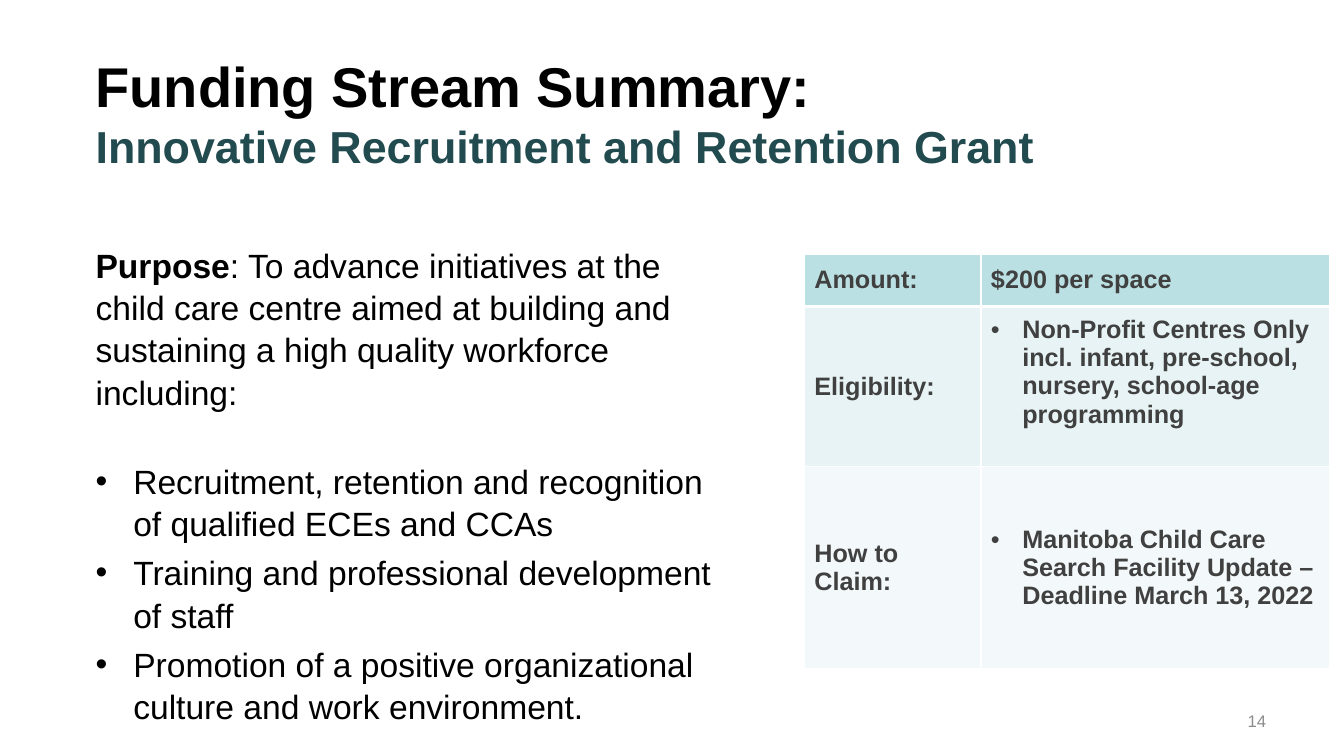
from dataclasses import dataclass

from lxml.etree import SubElement
from pptx import Presentation
from pptx.dml.color import RGBColor
from pptx.enum.text import MSO_ANCHOR, PP_ALIGN
from pptx.oxml import parse_xml
from pptx.oxml.ns import nsdecls, qn
from pptx.util import Cm, Pt


@dataclass(frozen=True)
class Theme:
    font: str = "Arial"
    black: str = "000000"
    teal: str = "224B50"
    dark: str = "404040"
    grey: str = "8C8C8C"
    white: str = "FFFFFF"
    rows: tuple = ("BBE0E3", "E7F3F4", "F3F9FA")
    title: int = 40
    subtitle: int = 32
    body: int = 24
    cell: int = 18
    number: int = 12


def add_span(para, text, *, font, size, color, bold=False):
    for index, line in enumerate(text.split("\n")):
        if index:
            para.add_line_break()
        if line:
            span = para.add_run()
            span.text = line
            span.font.name = font
            span.font.size = Pt(size)
            span.font.bold = bold
            span.font.color.rgb = RGBColor.from_string(color)


def add_bullet(para, indent):
    properties = para._p.get_or_add_pPr()
    properties.set("marL", str(indent))
    properties.set("indent", str(-indent))
    SubElement(properties, qn("a:buFont")).set("typeface", "Arial")
    SubElement(properties, qn("a:buChar")).set("char", "•")


def make_border(color, side, width):
    return parse_xml(
        f'<a:{side} {nsdecls("a")} w="{Pt(width)}"><a:solidFill>'
        f'<a:srgbClr val="{color}"/></a:solidFill></a:{side}>'
    )


class SlideBuilder:
    def __init__(self, deck, theme):
        self.theme = theme
        self.page = deck.slides.add_slide(deck.slide_layouts[6])

    def add_text(self, para, text, size, color, bold=False):
        add_span(para, text, font=self.theme.font, size=size, color=color, bold=bold)

    def text_box(self, left, top, width, height, anchor=MSO_ANCHOR.TOP):
        box = self.page.shapes.add_textbox(Cm(left), Cm(top), Cm(width), Cm(height))
        frame = box.text_frame
        frame.word_wrap = True
        frame.vertical_anchor = anchor
        return frame

    def title(self, heading, subheading):
        para = self.text_box(2.16, 1.24, 29.72, 3.18, MSO_ANCHOR.MIDDLE).paragraphs[0]
        self.add_text(para, heading + "\n", self.theme.title, self.theme.black, True)
        self.add_text(para, subheading, self.theme.subtitle, self.theme.teal, True)

    def body(self, lead, intro, points):
        size, color = self.theme.body, self.theme.black
        frame = self.text_box(2.16, 5.99, 16.71, 10.87)
        para = frame.paragraphs[0]
        para.line_spacing = 1.05
        self.add_text(para, lead, size, color, True)
        self.add_text(para, intro, size, color)
        for index, point in enumerate(points):
            para = frame.add_paragraph()
            para.line_spacing = 1.05
            para.space_before = Pt(4.8 if index else 33.6)
            add_bullet(para, Cm(0.95))
            self.add_text(para, point, size, color)

    def table(self, left, top, widths, heights, rows):
        table = self.page.shapes.add_table(
            len(rows), len(widths), Cm(left), Cm(top), Cm(sum(widths)), Cm(sum(heights))
        ).table
        table.horz_banding = False
        for column, width in zip(table.columns, widths):
            column.width = Cm(width)
        for row, height in zip(table.rows, heights):
            row.height = Cm(height)
        for r, texts in enumerate(rows):
            for c, text in enumerate(texts):
                self.fill_cell(table.cell(r, c), text, r, bulleted=r > 0 and c > 0)
        table.cell(1, 1).margin_bottom = Cm(0.86)

    def fill_cell(self, cell, text, row, bulleted):
        cell.vertical_anchor = MSO_ANCHOR.MIDDLE
        cell.fill.solid()
        cell.fill.fore_color.rgb = RGBColor.from_string(self.theme.rows[row])
        widths = {"lnL": 1, "lnR": 1, "lnT": 3 if row == 1 else 1, "lnB": 1 if row else 3}
        properties = cell._tc.get_or_add_tcPr()
        for index, (side, width) in enumerate(widths.items()):
            properties.insert(index, make_border(self.theme.white, side, width))
        para = cell.text_frame.paragraphs[0]
        if bulleted:
            add_bullet(para, Cm(0.79))
        self.add_text(para, text, self.theme.cell, self.theme.dark, True)

    def page_number(self, number):
        para = self.text_box(24.54, 17.65, 7.62, 1.02, MSO_ANCHOR.MIDDLE).paragraphs[0]
        para.alignment = PP_ALIGN.RIGHT
        self.add_text(para, number, self.theme.number, self.theme.grey)


def main():
    deck = Presentation()
    deck.slide_width, deck.slide_height = Cm(33.87), Cm(19.05)
    slide = SlideBuilder(deck, Theme())
    slide.page_number("14")
    slide.title("Funding Stream Summary:", "Innovative Recruitment and Retention Grant")
    slide.body(
        "Purpose",
        ": To advance initiatives at the child care centre aimed at building and "
        "sustaining a high quality workforce including:",
        [
            "Recruitment, retention and recognition of qualified ECEs and CCAs",
            "Training and professional development of staff",
            "Promotion of a positive organizational culture and work environment.",
        ],
    )
    slide.table(
        20.27, 6.4, [4.45, 8.79], [1.32, 4.04, 5.08],
        [
            ("Amount:", "$200 per space"),
            ("Eligibility:", "Non-Profit Centres Only\nincl. infant, pre-school, "
             "nursery, school-age programming"),
            ("How to Claim:", "Manitoba Child Care Search Facility Update – "
             "Deadline March 13, 2022"),
        ],
    )
    deck.save("out.pptx")


if __name__ == "__main__":
    main()
